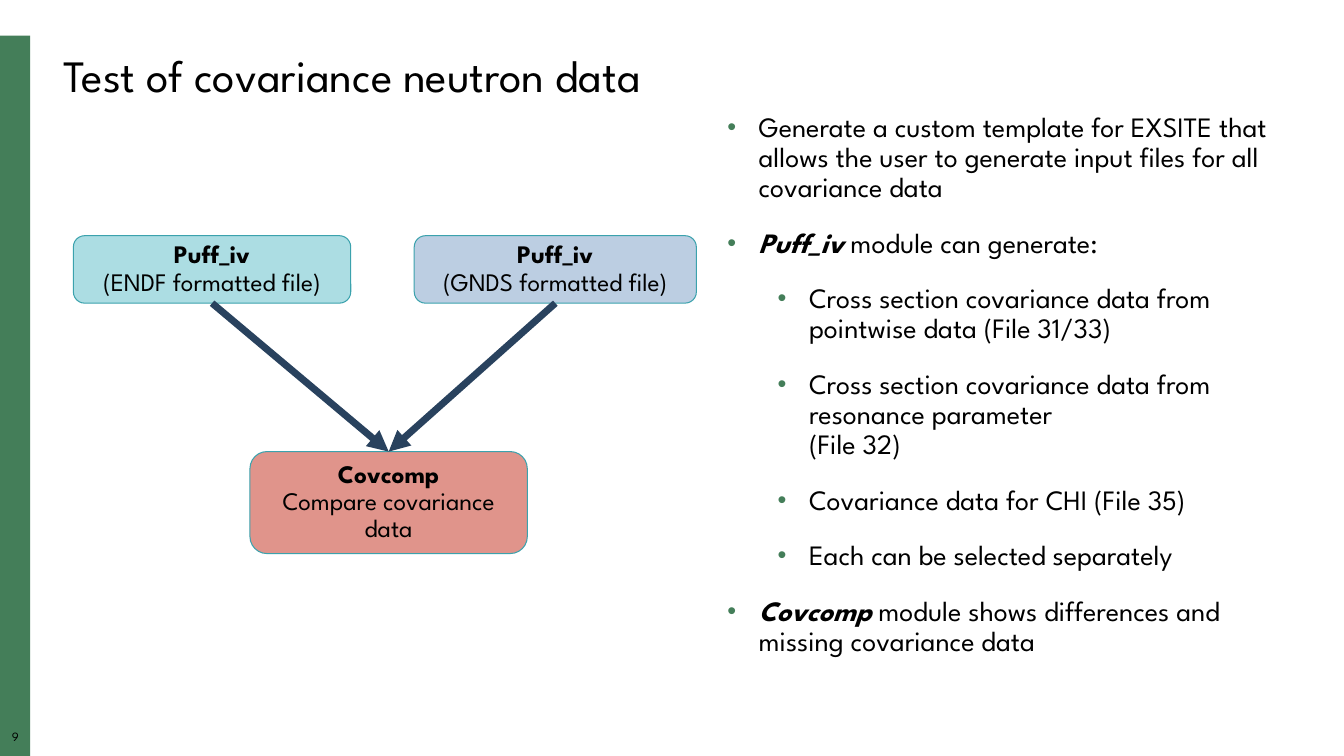
from lxml import etree
from pptx import Presentation
from pptx.dml.color import RGBColor
from pptx.enum.shapes import MSO_CONNECTOR, MSO_SHAPE
from pptx.enum.text import MSO_ANCHOR, PP_ALIGN
from pptx.oxml.ns import qn
from pptx.util import Cm, Pt

RECTANGLE, ROUNDED = MSO_SHAPE.RECTANGLE, MSO_SHAPE.ROUNDED_RECTANGLE
STRAIGHT = MSO_CONNECTOR.STRAIGHT
CENTER, LEFT = PP_ALIGN.CENTER, PP_ALIGN.LEFT
MIDDLE, TOP = MSO_ANCHOR.MIDDLE, MSO_ANCHOR.TOP
BOTTOM_SITE, TOP_SITE = 2, 0

# Content
FONT = "League Spartan"
GREEN, BLACK, TEAL, NAVY = "447E59", "000000", "3BA2AD", "29425E"
TITLE = "Test of covariance neutron data"
PAGE_NUMBER = "9"

# name: heading, description, fill, (left, top, width, height) in cm
BOXES = {
    "endf": ("Puff_iv", "(ENDF formatted file)", "ACDDE3", (1.85, 5.94, 6.99, 1.7)),
    "gnds": ("Puff_iv", "(GNDS formatted file)", "BCCEE2", (10.44, 5.94, 7.11, 1.7)),
    "compare": ("Covcomp", "Compare covariance data", "E0948B", (6.3, 11.38, 6.99, 2.57)),
}
ARROWS = [("endf", "compare"), ("gnds", "compare")]

# level, emphasised lead, text
BULLETS = [
    (0, "", "Generate a custom template for EXSITE that allows the user to "
            "generate input files for all covariance data"),
    (0, "Puff_iv", " module can generate:"),
    (1, "", "Cross section covariance data from pointwise data (File 31/33)"),
    (1, "", "Cross section covariance data from resonance parameter\n(File 32)"),
    (1, "", "Covariance data for CHI (File 35)"),
    (1, "", "Each can be selected separately"),
    (0, "Covcomp", " module shows differences and missing covariance data"),
]
HANGING = 0.79
LEVEL_STEP = 1.27


def color(hex_text):
    return RGBColor.from_string(hex_text)


def add_box(slide, kind, place, fill, line=None):
    shape = slide.shapes.add_shape(kind, *map(Cm, place))
    shape.shadow.inherit = False
    shape.fill.solid()
    shape.fill.fore_color.rgb = color(fill)
    if line:
        shape.line.color.rgb = color(line)
        shape.line.width = Pt(0.75)
    else:
        shape.line.fill.background()
    return shape


def prepare_frame(shape, anchor=TOP, margins=(0.25, 0.13)):
    frame = shape.text_frame
    frame.word_wrap = True
    frame.vertical_anchor = anchor
    frame.margin_left = frame.margin_right = Cm(margins[0])
    frame.margin_top = frame.margin_bottom = Cm(margins[1])
    return frame


def next_paragraph(frame):
    first = frame.paragraphs[0]
    return frame.add_paragraph() if first.runs else first


def style(paragraph, size, alignment=LEFT):
    paragraph.alignment = alignment
    paragraph.line_spacing = 0.9
    paragraph.font.size = Pt(size)
    paragraph.font.name = FONT
    paragraph.font.color.rgb = color(BLACK)


def add_label(slide, place, text, size, alignment=LEFT, margins=(0.25, 0.13)):
    frame = prepare_frame(slide.shapes.add_textbox(*map(Cm, place)), margins=margins)
    paragraph = frame.paragraphs[0]
    paragraph.add_run().text = text
    style(paragraph, size, alignment)


def add_bullet(paragraph, level):
    properties = paragraph._p.get_or_add_pPr()
    properties.set("marL", str(Cm(HANGING + level * LEVEL_STEP)))
    properties.set("indent", str(-Cm(HANGING)))
    bullet_color = etree.SubElement(properties, qn("a:buClr"))
    etree.SubElement(bullet_color, qn("a:srgbClr"), val=GREEN)
    etree.SubElement(properties, qn("a:buSzPct"), val="90000")
    etree.SubElement(properties, qn("a:buFont"), typeface="Arial")
    etree.SubElement(properties, qn("a:buChar"), char="•")


def add_arrow(slide, start, end):
    arrow = slide.shapes.add_connector(STRAIGHT, 0, 0, 0, 0)
    arrow.begin_connect(start, BOTTOM_SITE)
    arrow.end_connect(end, TOP_SITE)
    arrow.line.color.rgb = color(NAVY)
    arrow.line.width = Pt(5)
    etree.SubElement(arrow.line._get_or_add_ln(), qn("a:tailEnd"), type="triangle")
    etree.SubElement(arrow._element.spPr, qn("a:effectLst"))


def main():
    presentation = Presentation()
    presentation.slide_width, presentation.slide_height = Cm(33.87), Cm(19.05)
    slide = presentation.slides.add_slide(presentation.slide_layouts[6])

    # Side band, page number and title
    add_box(slide, RECTANGLE, (0, 0.9, 0.76, 18.15), GREEN)
    add_label(slide, (0, 18.42, 0.78, 0.42), PAGE_NUMBER, 9, CENTER, (0, 0))
    add_label(slide, (1.35, 1.22, 31.72, 1.5), TITLE, 32)

    # Flow diagram
    shapes = {}
    for name, (heading, description, fill, place) in BOXES.items():
        shapes[name] = add_box(slide, ROUNDED, place, fill, TEAL)
        frame = prepare_frame(shapes[name], MIDDLE, (0.13, 0.13))
        for text, bold in ((heading, True), (description, False)):
            paragraph = next_paragraph(frame)
            paragraph.add_run().text = text
            style(paragraph, 18, CENTER)
            paragraph.font.bold = bold
    for start, end in ARROWS:
        add_arrow(slide, shapes[start], shapes[end])

    # Bullet list
    frame = prepare_frame(slide.shapes.add_textbox(Cm(18.08), Cm(2.72), Cm(14.99), Cm(15.04)))
    for index, (level, lead, text) in enumerate(BULLETS):
        paragraph = next_paragraph(frame)
        paragraph.level = level
        add_bullet(paragraph, level)
        style(paragraph, 20)
        if index:
            paragraph.space_before = Pt(18)
        if lead:
            run = paragraph.add_run()
            run.text = lead
            run.font.bold = run.font.italic = True
        for number, line in enumerate(text.split("\n")):
            if number:
                paragraph.add_line_break()
            paragraph.add_run().text = line

    presentation.save("out.pptx")


if __name__ == "__main__":
    main()
